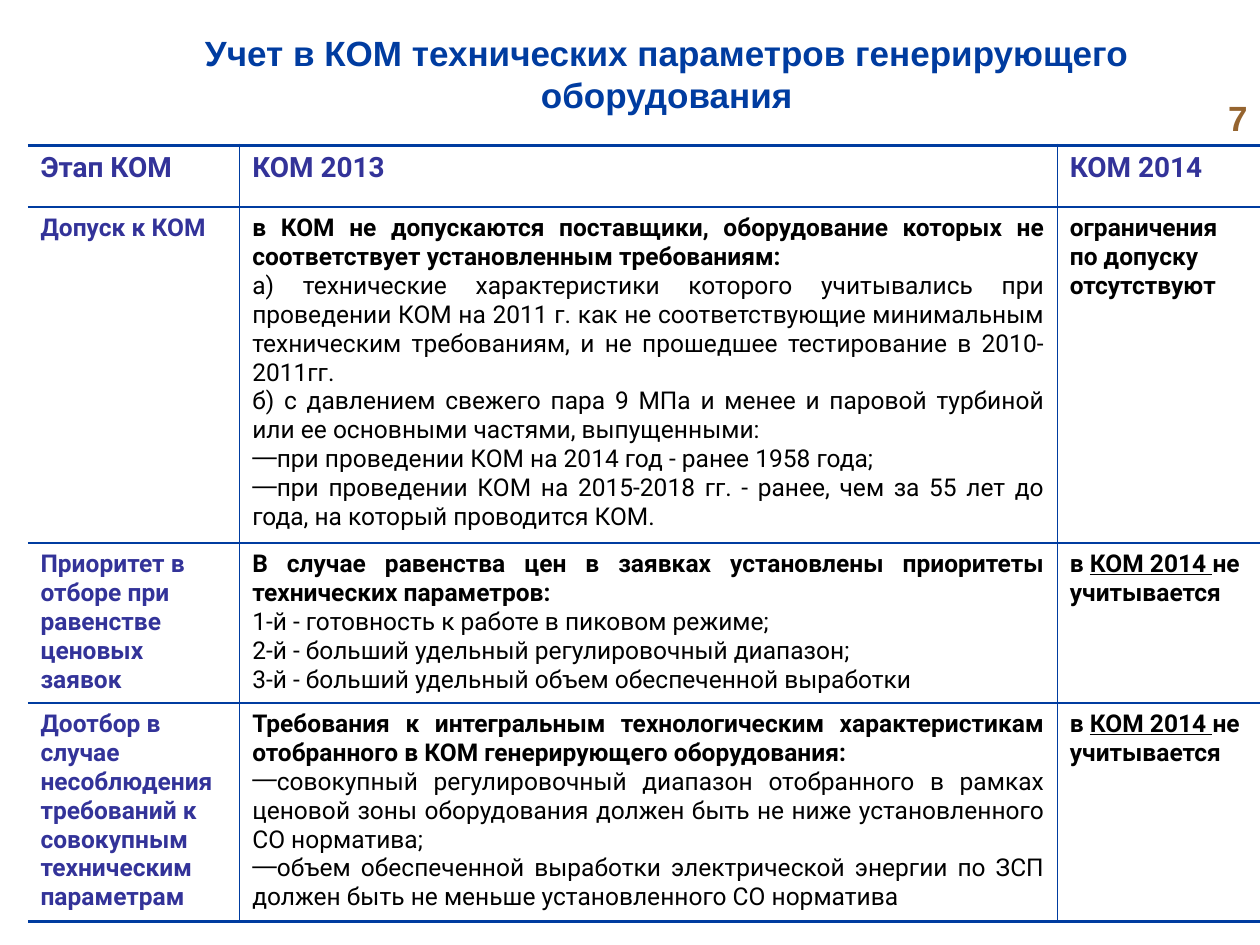
from dataclasses import dataclass

import pptx
import pptx.dml.color
import pptx.enum.text
import pptx.oxml
import pptx.oxml.ns
import pptx.util
from lxml import etree

Pt = pptx.util.Pt
Align = pptx.enum.text.PP_ALIGN
Anchor = pptx.enum.text.MSO_ANCHOR
qn = pptx.oxml.ns.qn


@dataclass(frozen=True)
class Theme:
    heading_font: str = "Arial"
    table_font: str = "Roboto"
    blue: str = "003CA0"
    stage: str = "333399"
    number: str = "95642F"
    body: str = "000000"
    heading_size: float = 20
    header_size: float = 16
    body_size: float = 14
    thin: float = 1
    thick: float = 2.25


@dataclass(frozen=True)
class Run:
    text: str
    underline: bool = False


@dataclass(frozen=True)
class Para:
    runs: tuple[Run, ...]
    bold: bool = True
    bullet: bool = False


@dataclass(frozen=True)
class Stage:
    name: str
    rules_2013: list[Para]
    rules_2014: list[Para]
    height: float


THEME = Theme()


def strong(text: str) -> Para:
    return Para((Run(text),))


def plain(text: str) -> Para:
    return Para((Run(text),), bold=False)


def dash(text: str) -> Para:
    return Para((Run(text),), bold=False, bullet=True)


# Table content
NOT_COUNTED = [Para((Run("в "), Run("КОМ 2014 ", underline=True), Run("не учитывается")))]
HEADERS = ["Этап КОМ", "КОМ 2013", "КОМ 2014"]
HEADER_HEIGHT = 35.3
COLUMN_WIDTHS = [121, 467.2, 115.9]
STAGES = [
    Stage(
        "Допуск к КОМ",
        [
            strong("в КОМ не допускаются поставщики, оборудование которых не "
                   "соответствует установленным требованиям:"),
            plain("а) технические характеристики которого учитывались при проведении КОМ "
                  "на 2011 г. как не соответствующие минимальным техническим требованиям, "
                  "и не прошедшее тестирование в 2010-2011гг."),
            plain("б) с давлением свежего пара 9 МПа и менее и паровой турбиной или ее "
                  "основными частями, выпущенными:"),
            dash("при проведении КОМ на 2014 год - ранее 1958 года;"),
            dash("при проведении КОМ на 2015-2018 гг. - ранее, чем за 55 лет до года, "
                 "на который проводится КОМ."),
        ],
        [strong("ограничения по допуску отсутствуют")],
        189,
    ),
    Stage(
        "Приоритет в отборе при равенстве ценовых заявок",
        [
            strong("В случае равенства цен в заявках установлены приоритеты "
                   "технических параметров:"),
            plain("1-й - готовность к работе в пиковом режиме;"),
            plain("2-й - больший удельный регулировочный диапазон;"),
            plain("3-й - больший удельный объем обеспеченной выработки"),
        ],
        NOT_COUNTED,
        90,
    ),
    Stage(
        "Доотбор в случае несоблюдения требований к совокупным техническим параметрам",
        [
            strong("Требования к интегральным технологическим характеристикам "
                   "отобранного в КОМ генерирующего оборудования:"),
            dash("совокупный регулировочный диапазон отобранного в рамках ценовой зоны "
                 "оборудования должен быть не ниже установленного СО норматива;"),
            dash("объем обеспеченной выработки электрической энергии по ЗСП должен быть "
                 "не меньше установленного СО норматива"),
        ],
        NOT_COUNTED,
        123,
    ),
]


def write_text(frame, paragraphs: list[Para], *, size: float, color: str,
               font: str = THEME.table_font, align=Align.LEFT) -> None:
    frame.word_wrap = True
    for index, item in enumerate(paragraphs):
        paragraph = frame.paragraphs[0] if index == 0 else frame.add_paragraph()
        paragraph.alignment = align
        if item.bullet:
            properties = paragraph._p.get_or_add_pPr()
            properties.set("marL", "0")
            properties.set("indent", "0")
            etree.SubElement(properties, qn("a:buChar")).set("char", "―")
        for part in item.runs:
            run = paragraph.add_run()
            run.text = part.text
            run.font.name = font
            run.font.size = Pt(size)
            run.font.bold = item.bold
            run.font.underline = part.underline
            run.font.color.rgb = pptx.dml.color.RGBColor.from_string(color)


def add_heading(slide, text: str, left: float, top: float, width: float, height: float,
                *, color: str, align, anchor) -> None:
    box = slide.shapes.add_textbox(Pt(left), Pt(top), Pt(width), Pt(height))
    box.text_frame.vertical_anchor = anchor
    write_text(box.text_frame, [strong(text)], size=THEME.heading_size, color=color,
               font=THEME.heading_font, align=align)


def set_borders(cell, widths: dict[str, float]) -> None:
    """Draw the sides L, R, T, B; a zero width leaves a side open."""
    properties = cell._tc.get_or_add_tcPr()
    for side, width in widths.items():
        line = etree.SubElement(properties, qn(f"a:ln{side}"))
        line.set("w", str(int(Pt(width))))
        if width:
            fill = etree.SubElement(line, qn("a:solidFill"))
            etree.SubElement(fill, qn("a:srgbClr")).set("val", THEME.blue)
        else:
            etree.SubElement(line, qn("a:noFill"))


def add_comparison(slide) -> None:
    rows = [[[strong(header)] for header in HEADERS]]
    rows += [[[strong(s.name)], s.rules_2013, s.rules_2014] for s in STAGES]
    heights = [HEADER_HEIGHT] + [stage.height for stage in STAGES]
    last_row, last_column = len(rows) - 1, len(HEADERS) - 1
    table = slide.shapes.add_table(len(rows), len(HEADERS), Pt(16), Pt(83),
                                   Pt(sum(COLUMN_WIDTHS)), Pt(sum(heights))).table
    table.first_row = table.horz_banding = False
    for column, width in zip(table.columns, COLUMN_WIDTHS):
        column.width = Pt(width)
    for r, (contents, height) in enumerate(zip(rows, heights)):
        table.rows[r].height = Pt(height)
        for c, paragraphs in enumerate(contents):
            cell = table.cell(r, c)
            set_borders(cell, {
                "L": THEME.thin if c > 0 else 0,
                "R": THEME.thin if c < last_column else 0,
                "T": THEME.thick if r == 0 else THEME.thin,
                "B": THEME.thick if r == last_row else THEME.thin,
            })
            cell.fill.background()
            write_text(cell.text_frame, paragraphs,
                       size=THEME.header_size if r == 0 else THEME.body_size,
                       color=THEME.stage if r == 0 or c == 0 else THEME.body,
                       align=Align.JUSTIFY if r > 0 and c == 1 else Align.LEFT)


def main() -> None:
    deck = pptx.Presentation()
    deck.slide_width, deck.slide_height = Pt(720), Pt(540)
    slide = deck.slides.add_slide(deck.slide_layouts[6])

    # Title and page number
    add_heading(slide, "Учет в КОМ технических параметров генерирующего оборудования",
                88, 0, 586, 83.5, color=THEME.blue, align=Align.CENTER, anchor=Anchor.MIDDLE)
    add_heading(slide, "7", 674.6, 43.2, 45.4, 39.6,
                color=THEME.number, align=Align.RIGHT, anchor=Anchor.BOTTOM)

    # Comparison of the two selections
    add_comparison(slide)
    deck.save("out.pptx")


if __name__ == "__main__":
    main()
